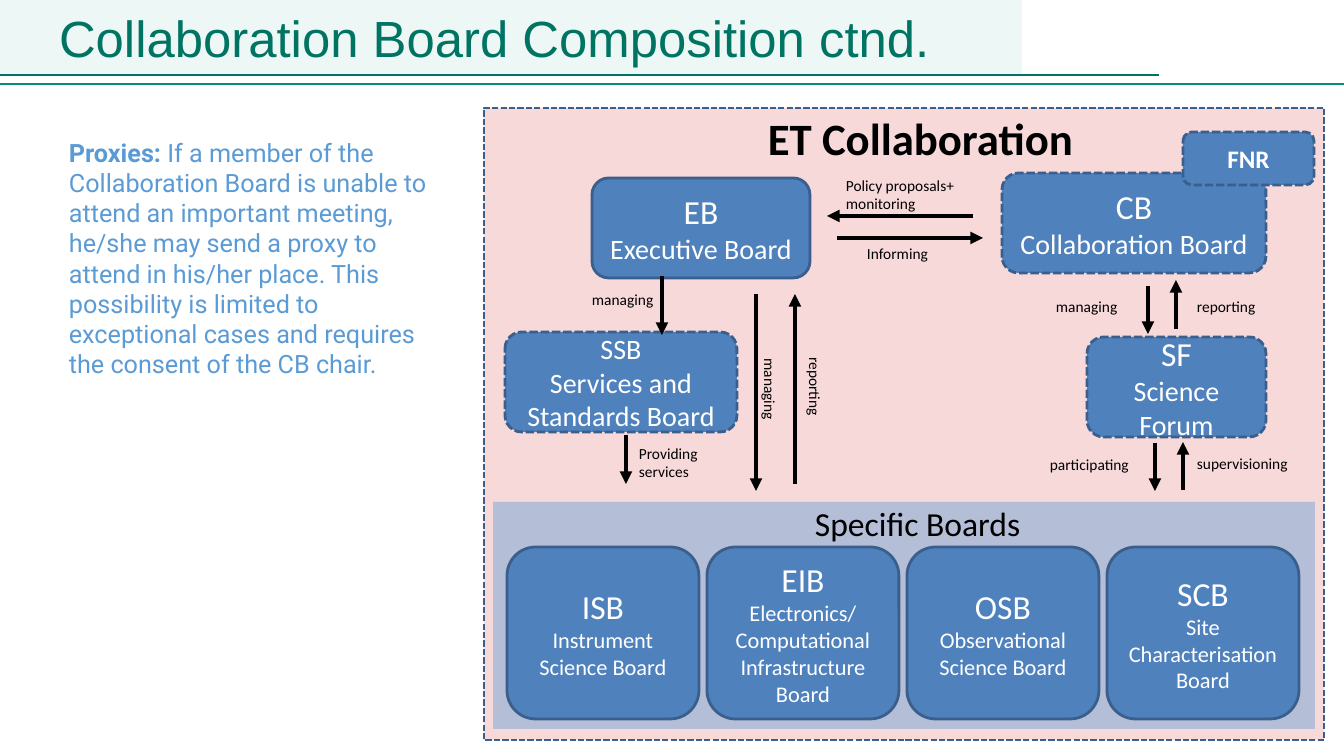
import pptx
import pptx.util
import pptx.dml.color
import pptx.enum.dml
import pptx.enum.shapes
import pptx.enum.text
import pptx.oxml.ns
from lxml import etree

PX = 914400 / 100.8
COLORS = {"band": "EDF7F6", "title": "007463", "rule": "008F7A", "proxies": "5B9BD5",
          "frame": "CE181E", "specific": "5B9BD5", "board": "4F81BD", "border": "3A5F8C",
          "white": "FFFFFF", "black": "000000"}
SHAPE = pptx.enum.shapes.MSO_SHAPE
ANCHOR = pptx.enum.text.MSO_ANCHOR
ALIGN = pptx.enum.text.PP_ALIGN


def px(value):
    return round(value * PX)


def color(name):
    return pptx.dml.color.RGBColor.from_string(COLORS[name])


def add_xml(parent, tag, **attributes):
    return etree.SubElement(parent, pptx.oxml.ns.qn(tag), attributes)


class BoardSlide:
    """Style and drawing methods for the current slide."""

    def __init__(self, slide):
        self.slide = slide
        self.shapes = slide.shapes

    def font(self, target, size, ink, name="Calibri", bold=False):
        target.name, target.size, target.bold = name, pptx.util.Pt(size), bold
        target.color.rgb = color(ink)

    def title(self, text, *box):
        heading = self.shapes.title
        heading.left, heading.top, heading.width, heading.height = map(px, box)
        frame = heading.text_frame
        frame.margin_left = frame.margin_right = frame.margin_top = frame.margin_bottom = 0
        frame.vertical_anchor = ANCHOR.MIDDLE
        frame.auto_size = pptx.enum.text.MSO_AUTO_SIZE.NONE
        frame.text = text
        paragraph = frame.paragraphs[0]
        paragraph.alignment, paragraph.line_spacing = ALIGN.LEFT, 1.07
        self.font(paragraph.font, 36.3, "title", "Arial")
        # Bring the heading in front of the band
        heading._element.getparent().append(heading._element)

    def area(self, box, fill, border=None, width=2, dashed=False, opacity=100,
             kind=SHAPE.RECTANGLE):
        shape = self.shapes.add_shape(kind, *map(px, box))
        shape.shadow.inherit = False
        shape.fill.solid()
        shape.fill.fore_color.rgb = color(fill)
        if opacity < 100:
            tint = shape._element.spPr.find(".//" + pptx.oxml.ns.qn("a:srgbClr"))
            add_xml(tint, "a:alpha", val=str(opacity * 1000))
        if border:
            shape.line.color.rgb = color(border)
            shape.line.width = pptx.util.Pt(width)
            if dashed:
                shape.line.dash_style = pptx.enum.dml.MSO_LINE.SQUARE_DOT
        else:
            shape.line.fill.background()
        return shape

    def board(self, box, lines, dashed=False, bold=False):
        shape = self.area(box, "board", "border", dashed=dashed, kind=SHAPE.ROUNDED_RECTANGLE)
        frame = shape.text_frame
        frame.word_wrap, frame.vertical_anchor = True, ANCHOR.MIDDLE
        for index, (text, size) in enumerate(lines):
            paragraph = frame.add_paragraph() if index else frame.paragraphs[0]
            paragraph.text, paragraph.alignment = text, ALIGN.CENTER
            self.font(paragraph.font, size, "white", bold=bold)

    def label(self, box, text, size=11, bold=False, rotation=0):
        shape = self.shapes.add_textbox(*map(px, box))
        shape.rotation = rotation
        frame = shape.text_frame
        frame.word_wrap = True
        frame.text = text
        for paragraph in frame.paragraphs:
            self.font(paragraph.font, size, "black", bold=bold)

    def proxies(self, box, lead, rest):
        frame = self.shapes.add_textbox(*map(px, box)).text_frame
        frame.word_wrap = True
        paragraph = frame.paragraphs[0]
        self.font(paragraph.font, 18, "proxies", "Roboto")
        for text, bold in ((lead, True), (rest, False)):
            run = paragraph.add_run()
            run.text, run.font.bold = text, bold

    def line(self, ends, ink="black", width=3, arrow=True):
        connector = self.shapes.add_connector(
            pptx.enum.shapes.MSO_CONNECTOR.STRAIGHT, *map(px, ends))
        connector.line.color.rgb = color(ink)
        connector.line.width = pptx.util.Pt(width)
        if arrow:
            add_xml(connector.line._get_or_add_ln(), "a:tailEnd", type="triangle")
        add_xml(connector._element.spPr, "a:effectLst")


def main():
    deck = pptx.Presentation()
    deck.slide_width, deck.slide_height = px(1344), px(756)
    page = BoardSlide(deck.slides.add_slide(deck.slide_layouts[5]))

    # Heading
    page.area((0, 0, 1022, 75), "band")
    page.line((0, 75, 1159, 75), "title", 2, arrow=False)
    page.line((0, 84, 1344, 84), "rule", 2, arrow=False)
    page.title("Collaboration Board Composition ctnd.", 59, 0, 1180, 71)

    # Proxy rule
    page.proxies((59, 132, 397, 254), "Proxies: ",
                 "If a member of the Collaboration Board is unable to attend an important "
                 "meeting, he/she may send a proxy to attend in his/her place. This possibility "
                 "is limited to exceptional cases and requires the consent of the CB chair.")

    # Collaboration frame and its boards
    page.area((484, 108, 840, 632), "frame", "border", 1.5, dashed=True, opacity=16)
    page.label((758, 106, 350, 64), "ET Collaboration", 32, bold=True)
    page.board((1002, 173, 264, 100), [("CB", 24), ("Collaboration Board", 20)], dashed=True)
    page.board((592, 178, 218, 100), [("EB", 24), ("Executive Board", 20)])
    page.board((505, 332, 232, 100), [("SSB", 20), ("Services and Standards Board", 20)],
               dashed=True)
    page.board((1087, 337, 179, 100), [("SF", 24), ("Science Forum", 20)], dashed=True)
    page.board((1183, 132, 131, 53), [("FNR", 18)], dashed=True, bold=True)

    # Specific boards
    page.area((493, 502, 822, 227), "specific", opacity=42)
    page.label((805, 498, 250, 50), "Specific Boards", 24)
    specific_boards = [("ISB", "Instrument Science Board"),
                       ("EIB", "Electronics/\nComputational Infrastructure Board"),
                       ("OSB", "Observational Science Board"),
                       ("SCB", "Site Characterisation Board")]
    for index, (short, full) in enumerate(specific_boards):
        page.board((507 + 200 * index, 547, 192, 172), [(short, 24), (full, 16)])

    # Arrows between boards
    for ends in [(973, 216, 827, 216), (837, 238, 983, 238), (662, 276, 662, 335),
                 (626, 435, 626, 484), (756, 294, 756, 491), (795, 484, 795, 294),
                 (1148, 286, 1148, 334), (1176, 329, 1176, 280),
                 (1155, 443, 1155, 491), (1183, 490, 1183, 442)]:
        page.line(ends)

    # Arrow labels
    for box, text in [((836, 171, 150, 47), "Policy proposals+\nmonitoring"),
                      ((857, 239, 99, 29), "Informing"),
                      ((582, 285, 99, 29), "managing"),
                      ((629, 439, 99, 47), "Providing services"),
                      ((1046, 292, 99, 29), "managing"),
                      ((1187, 292, 99, 29), "reporting"),
                      ((1187, 449, 131, 29), "supervisioning"),
                      ((1040, 450, 131, 29), "participating")]:
        page.label(box, text)
    page.label((723, 381, 94, 29), "managing", rotation=90)
    page.label((768, 380, 94, 29), "reporting", rotation=90)

    deck.save("out.pptx")


if __name__ == "__main__":
    main()
